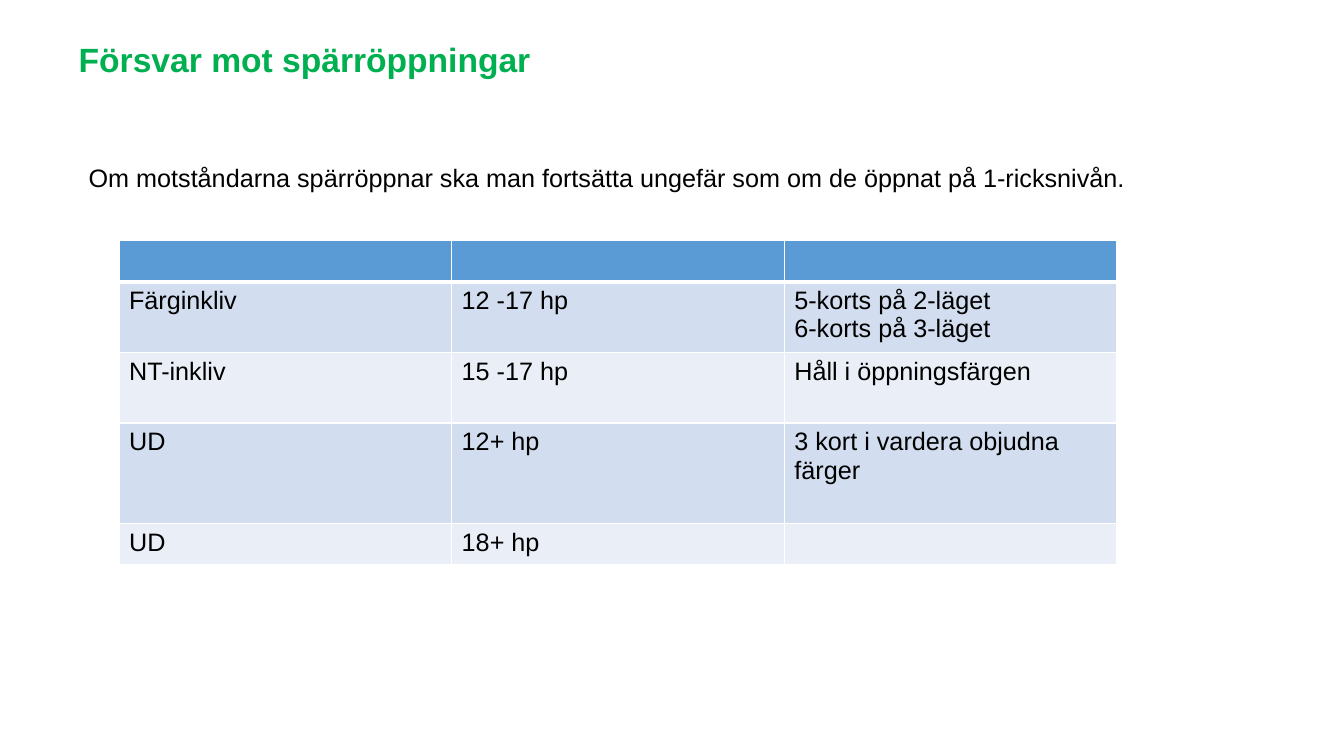
from lxml.etree import SubElement
from pptx import Presentation
from pptx.dml.color import RGBColor
from pptx.enum.text import MSO_ANCHOR, MSO_AUTO_SIZE, PP_ALIGN
from pptx.oxml.ns import qn
from pptx.util import Pt


def format_font(font, size, color, bold=False):
    values = {"name": "Arial", "size": Pt(size), "bold": bold}
    for key, value in values.items():
        setattr(font, key, value)
    font.color.rgb = RGBColor.from_string(color)


def add_border(cell, side, width):
    """Draw a white line on one side of a cell; call before setting its fill."""
    line = SubElement(cell._tc.get_or_add_tcPr(), qn(f"a:ln{side}"), w=str(Pt(width)))
    SubElement(SubElement(line, qn("a:solidFill")), qn("a:srgbClr"), val="FFFFFF")


prs = Presentation()
prs.slide_width, prs.slide_height = Pt(960), Pt(540)
slide = prs.slides.add_slide(prs.slide_layouts[5])

# Heading and introduction
heading = slide.shapes.title
heading_place = {"left": 49, "top": 24.5, "width": 356.4, "height": 36}
for key, value in heading_place.items():
    setattr(heading, key, Pt(value))
intro = slide.shapes.add_textbox(Pt(56.2), Pt(112.3), Pt(810), Pt(28.8))

frame_format = {
    "word_wrap": True,
    "auto_size": MSO_AUTO_SIZE.NONE,
    "vertical_anchor": MSO_ANCHOR.TOP,
}
texts = [
    (heading, "Försvar mot spärröppningar", 24, "00B050", True),
    (intro, "Om motståndarna spärröppnar ska man fortsätta ungefär "
            "som om de öppnat på 1-ricksnivån.", 18, "000000", False),
]
for box, text, size, color, bold in texts:
    frame = box.text_frame
    for key, value in frame_format.items():
        setattr(frame, key, value)
    frame.text = text
    frame.paragraphs[0].alignment = PP_ALIGN.LEFT
    format_font(frame.paragraphs[0].font, size, color, bold)

# Table of overcalls: row height and cell texts
overcalls = [
    (29.3, ["", "", ""]),
    (50.4, ["Färginkliv", "12 -17 hp", "5-korts på 2-läget\n6-korts på 3-läget"]),
    (50.4, ["NT-inkliv", "15 -17 hp", "Håll i öppningsfärgen"]),
    (72, ["UD", "12+ hp", "3 kort i vardera objudna färger"]),
    (29.3, ["UD", "18+ hp", ""]),
]
table_height = sum(height for height, _ in overcalls)
table = slide.shapes.add_table(
    len(overcalls), 3, Pt(85), Pt(172), Pt(712.8), Pt(table_height)).table
table.first_row = table.horz_banding = False

for r, (height, cell_texts) in enumerate(overcalls):
    table.rows[r].height = Pt(height)
    band = "5B9BD5" if r == 0 else ("EAEFF7", "D2DEEF")[r % 2]
    borders = {"L": 1, "R": 1, "T": 3 if r == 1 else 1, "B": 3 if r == 0 else 1}
    for c, text in enumerate(cell_texts):
        cell = table.cell(r, c)
        for side, width in borders.items():
            add_border(cell, side, width)
        cell.fill.solid()
        cell.fill.fore_color.rgb = RGBColor.from_string(band)
        cell.text = text
        for paragraph in cell.text_frame.paragraphs:
            format_font(paragraph.font, 18, "000000")

prs.save("out.pptx")
